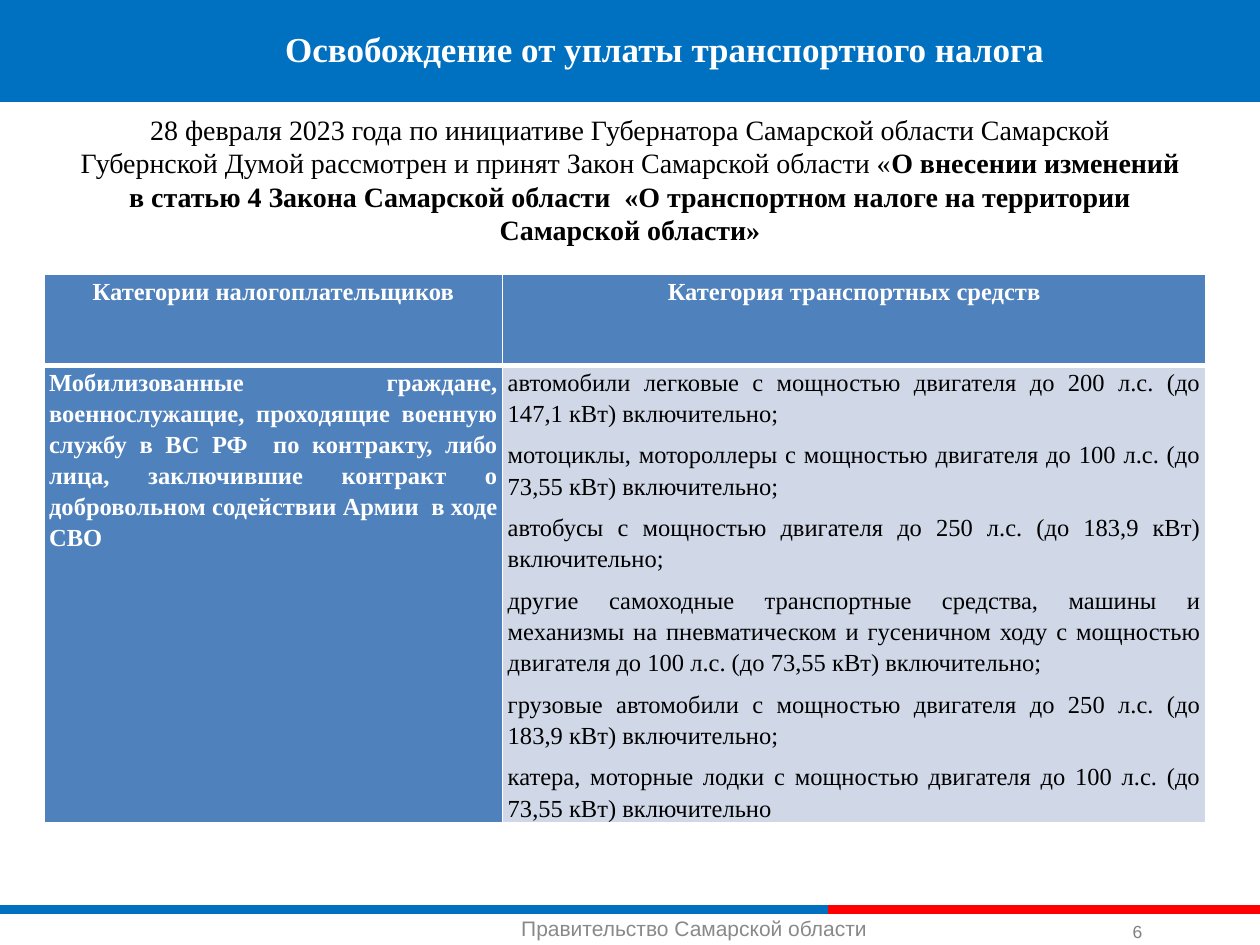
"""Build the slide on transport tax exemption in Samara Region."""
import pptx
import pptx.dml.color
import pptx.enum.shapes
import pptx.enum.text
import pptx.oxml
import pptx.oxml.ns
import pptx.util
from pptx.util import Inches

RGBColor = pptx.dml.color.RGBColor
ALIGN = pptx.enum.text.PP_ALIGN
ANCHOR = pptx.enum.text.MSO_ANCHOR
BLUE = RGBColor(0x00, 0x70, 0xC1)
RED = RGBColor(0xFF, 0x00, 0x00)
WHITE = RGBColor(0xFF, 0xFF, 0xFF)
BLACK = RGBColor(0x00, 0x00, 0x00)
HEADER_BLUE = RGBColor(0x4F, 0x81, 0xBD)
PALE_BLUE = RGBColor(0xD0, 0xD8, 0xE8)
FOOTER_GRAY = RGBColor(0x89, 0x89, 0x89)
NUMBER_GRAY = RGBColor(0x80, 0x80, 0x80)
SERIF = "Times New Roman"


def style_font(font, size, color, bold=False, name=SERIF):
    font.name = name
    font.size = pptx.util.Pt(size)
    font.bold = bold
    font.color.rgb = color


def set_margins(frame):
    frame.margin_left = frame.margin_right = Inches(0.05)
    frame.margin_top = frame.margin_bottom = Inches(0.05)
    frame.word_wrap = True


deck = pptx.Presentation()
deck.slide_width = Inches(10)
deck.slide_height = Inches(7.5)
page = deck.slides.add_slide(deck.slide_layouts[5])

band = page.shapes.add_shape(
    pptx.enum.shapes.MSO_SHAPE.RECTANGLE, 0, Inches(-0.03), Inches(10), Inches(0.84))
band.shadow.inherit = False
band.fill.solid()
band.fill.fore_color.rgb = BLUE
band.line.fill.background()

for start, end, color in [(0, 6.57, BLUE), (6.57, 10, RED)]:
    rule = page.shapes.add_connector(
        pptx.enum.shapes.MSO_CONNECTOR.STRAIGHT,
        Inches(start), Inches(7.22), Inches(end), Inches(7.22))
    rule.line.color.rgb = color
    rule.line.width = pptx.util.Pt(5)
    rule.element.spPr.append(pptx.oxml.parse_xml(
        f'<a:effectLst {pptx.oxml.ns.nsdecls("a")}/>'))

footer = page.shapes.add_textbox(Inches(2.24), Inches(7.22), Inches(6.54), Inches(0.29))
set_margins(footer.text_frame)
footer.text_frame.text = "Правительство Самарской области"
footer.text_frame.paragraphs[0].alignment = ALIGN.CENTER
style_font(footer.text_frame.paragraphs[0].runs[0].font, 12, FOOTER_GRAY, name="Arial")

number = page.shapes.add_textbox(Inches(8.94), Inches(7.26), Inches(0.27), Inches(0.27))
set_margins(number.text_frame)
number.text_frame.word_wrap = False
number.text_frame.vertical_anchor = ANCHOR.BOTTOM
number.text_frame.text = "6"
style_font(number.text_frame.paragraphs[0].runs[0].font, 10, NUMBER_GRAY, name="Arial")

title = page.shapes.title
title.element.getparent().append(title.element)
title.left, title.top = Inches(1.3), Inches(-0.03)
title.width, title.height = Inches(7.95), Inches(0.81)
set_margins(title.text_frame)
title.text_frame.vertical_anchor = ANCHOR.MIDDLE
title.text_frame.text = "Освобождение от уплаты транспортного налога"
title.text_frame.paragraphs[0].alignment = ALIGN.CENTER
title.text_frame.paragraphs[0].line_spacing = 1.07
style_font(title.text_frame.paragraphs[0].runs[0].font, 20, WHITE, bold=True)

vehicles = [
    "автомобили легковые с мощностью двигателя до 200 л.с. (до 147,1 кВт) включительно;",
    "мотоциклы, мотороллеры с мощностью двигателя до 100 л.с. (до 73,55 кВт) включительно;",
    "автобусы с мощностью двигателя до 250 л.с. (до 183,9 кВт) включительно;",
    "другие самоходные транспортные средства, машины и механизмы на пневматическом "
    "и гусеничном ходу с мощностью двигателя до 100 л.с. (до 73,55 кВт) включительно;",
    "грузовые автомобили с мощностью двигателя до 250 л.с. (до 183,9 кВт) включительно;",
    "катера, моторные лодки с мощностью двигателя до 100 л.с. (до 73,55 кВт) включительно",
]
taxpayers = (
    "Мобилизованные граждане, военнослужащие, проходящие военную службу в ВС РФ  "
    "по контракту, либо лица, заключившие контракт о добровольном содействии Армии  "
    "в ходе СВО")
rows = [
    [["Категории налогоплательщиков"], ["Категория транспортных средств"]],
    [[taxpayers], vehicles],
]
table = page.shapes.add_table(
    2, 2, Inches(0.35), Inches(2.18), Inches(9.22), Inches(4.34)).table
for column, width in zip(table.columns, (3.64, 5.58)):
    column.width = Inches(width)
for row, height in zip(table.rows, (0.72, 3.62)):
    row.height = Inches(height)

for row_index, row in enumerate(rows):
    for column_index, lines in enumerate(row):
        cell = table.cell(row_index, column_index)
        is_list = lines is vehicles
        cell.margin_left = cell.margin_right = Inches(0.04)
        cell.margin_top = cell.margin_bottom = 0
        thick_side = "B" if row_index == 0 else "T"
        properties = cell._tc.get_or_add_tcPr()
        for side in "LRTB":
            width = pptx.util.Pt(3 if side == thick_side else 1)
            properties.append(pptx.oxml.parse_xml(
                f'<a:ln{side} {pptx.oxml.ns.nsdecls("a")} w="{width}">'
                f'<a:solidFill><a:srgbClr val="{WHITE}"/></a:solidFill></a:ln{side}>'))
        cell.fill.solid()
        cell.fill.fore_color.rgb = PALE_BLUE if is_list else HEADER_BLUE
        cell.text_frame.text = "\n".join(lines)
        for index, para in enumerate(cell.text_frame.paragraphs):
            para.alignment = ALIGN.JUSTIFY if row_index else ALIGN.CENTER
            para.line_spacing = 1.15
            if index:
                para.space_before = pptx.util.Pt(6)
            style_font(para.runs[0].font, 14, BLACK if is_list else WHITE, bold=not is_list)

intro = page.shapes.add_textbox(Inches(0.59), Inches(0.84), Inches(8.82), Inches(1.45))
set_margins(intro.text_frame)
para = intro.text_frame.paragraphs[0]
para.alignment = ALIGN.CENTER
for text, bold in [
    ("28 февраля 2023 года по инициативе Губернатора Самарской области Самарской "
     "Губернской Думой рассмотрен и принят Закон Самарской области «", False),
    ("О внесении изменений в статью 4 Закона Самарской области  "
     "«О транспортном налоге на территории Самарской области»", True),
]:
    span = para.add_run()
    span.text = text
    style_font(span.font, 16, BLACK, bold)

deck.save("out.pptx")
